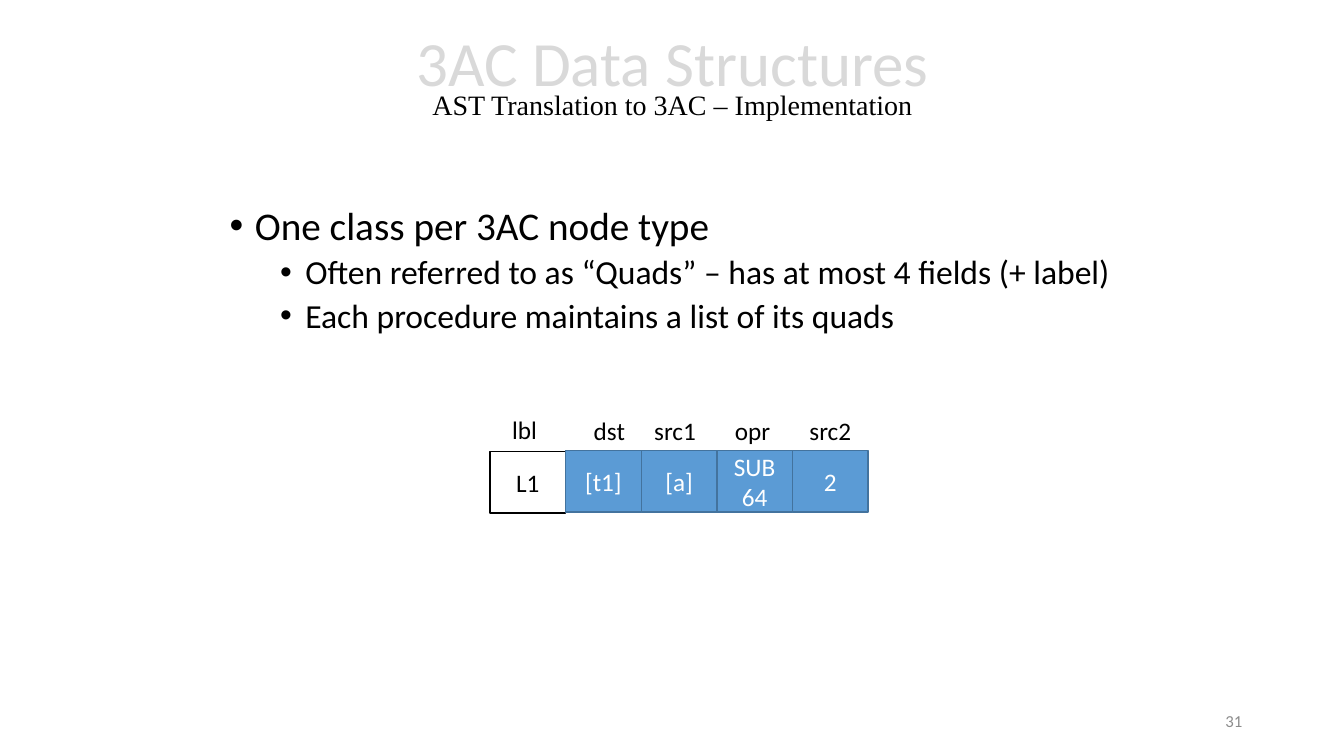
from pptx import Presentation
from pptx.dml.color import RGBColor
from pptx.enum.shapes import MSO_SHAPE
from pptx.enum.text import MSO_ANCHOR, MSO_AUTO_SIZE, PP_ALIGN
from pptx.oxml.xmlchemy import OxmlElement
from pptx.util import Inches, Pt

RECT = MSO_SHAPE.RECTANGLE
MIDDLE = MSO_ANCHOR.MIDDLE
TOP = MSO_ANCHOR.TOP
NO_FIT = MSO_AUTO_SIZE.NONE
LEFT, CENTER, RIGHT = PP_ALIGN.LEFT, PP_ALIGN.CENTER, PP_ALIGN.RIGHT

BLACK = RGBColor(0x00, 0x00, 0x00)
WHITE = RGBColor(0xFF, 0xFF, 0xFF)
PALE = RGBColor(0xD9, 0xD9, 0xD9)
GRAY = RGBColor(0x8C, 0x8C, 0x8C)
BLUE = RGBColor(0x5B, 0x9B, 0xD5)
NAVY = RGBColor(0x43, 0x73, 0x9E)

SANS = "Calibri"
SERIF = "Times New Roman"

POINTS = [
    ("One class per 3AC node type", 0),
    ("Often referred to as “Quads” – has at most 4 fields (+ label)", 1),
    ("Each procedure maintains a list of its quads", 1),
]
FIELDS = [
    ("lbl", 4.98, 0.45, "L1"),
    ("dst", 5.79, 0.51, "[t1]"),
    ("src1", 6.39, 0.62, "[a]"),
    ("opr", 7.19, 0.56, "SUB\n64"),
    ("src2", 7.93, 0.62, "2"),
]
CELL_X, CELL_Y, CELL_W, CELL_H = 4.86, 4.47, 0.75, 0.61


class Deck:
    """Holds the text style and the current slide."""

    def __init__(self, prs):
        self.font = SANS
        self.slide = prs.slides.add_slide(prs.slide_layouts[5])

    def style(self, run, size, color, font=None):
        run.font.name = font or self.font
        run.font.size = Pt(size)
        run.font.color.rgb = color

    def fill(self, frame, text, size, color, align):
        frame.text = text
        for para in frame.paragraphs:
            para.alignment = align
            for run in para.runs:
                self.style(run, size, color)

    def title(self, box, head, sub):
        shape = self.slide.shapes.title
        shape.left, shape.top, shape.width, shape.height = map(Inches, box)
        frame = shape.text_frame
        frame.auto_size = NO_FIT
        frame.vertical_anchor = MIDDLE
        para = frame.paragraphs[0]
        para.text = head + "\v" + sub
        para.alignment = CENTER
        para.line_spacing = 0.7
        upper, lower = para.runs
        self.style(upper, 45, PALE)
        self.style(lower, 20, BLACK, SERIF)

    def text(self, box, text, size, color=BLACK, align=LEFT, anchor=TOP, wrap=False):
        frame = self.slide.shapes.add_textbox(*map(Inches, box)).text_frame
        frame.word_wrap = wrap
        frame.vertical_anchor = anchor
        self.fill(frame, text, size, color, align)
        return frame

    def bullets(self, box, points):
        text = "\n".join(line for line, level in points)
        frame = self.text(box, text, 24, wrap=True)
        for para, (line, level) in zip(frame.paragraphs, points):
            para.level = level
            para.line_spacing = 0.9
            para.space_before = Pt(5 if level else 10)
            para.runs[0].font.size = Pt(24 if level else 28)
            props = para._p.get_or_add_pPr()
            props.set("marL", str(Inches(0.25 + 0.5 * level)))
            props.set("indent", str(Inches(-0.25)))
            face = OxmlElement("a:buFont")
            face.set("typeface", "Arial")
            mark = OxmlElement("a:buChar")
            mark.set("char", "•")
            props.extend([face, mark])

    def cell(self, box, text, fill, line, color):
        shape = self.slide.shapes.add_shape(RECT, *map(Inches, box))
        shape.shadow.inherit = False
        shape.fill.solid()
        shape.fill.fore_color.rgb = fill
        shape.line.color.rgb = line
        shape.line.width = Pt(1)
        shape.text_frame.vertical_anchor = MIDDLE
        self.fill(shape.text_frame, text, 18, color, CENTER)


def main():
    prs = Presentation()
    prs.slide_width, prs.slide_height = Inches(13.33), Inches(7.5)
    deck = Deck(prs)
    deck.title((1.67, 0.09, 10, 1.45), "3AC Data Structures",
               "AST Translation to 3AC – Implementation")
    deck.bullets((2.18, 2, 9.1, 2), POINTS)
    deck.text((9.42, 6.95, 3, 0.4), "31", 12, GRAY, RIGHT, MIDDLE, True)
    for col, (name, left, width, value) in enumerate(FIELDS):
        tint = (BLUE, NAVY, WHITE) if col else (WHITE, BLACK, BLACK)
        drop = 0 if col else 0.01
        box = (CELL_X + col * CELL_W, CELL_Y + drop, CELL_W, CELL_H)
        deck.cell(box, value, *tint)
        deck.text((left, 4.07 - drop, width, 0.4), name, 18)
    prs.save("out.pptx")


if __name__ == "__main__":
    main()
